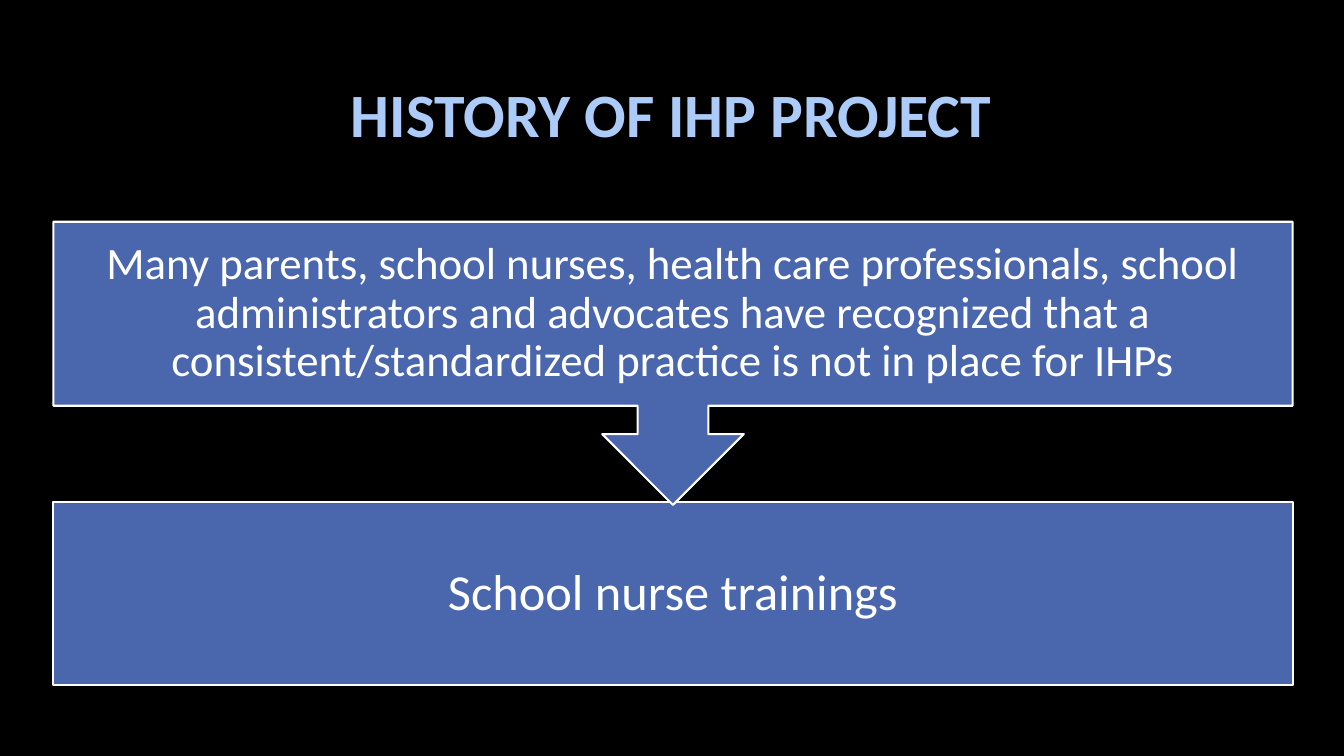
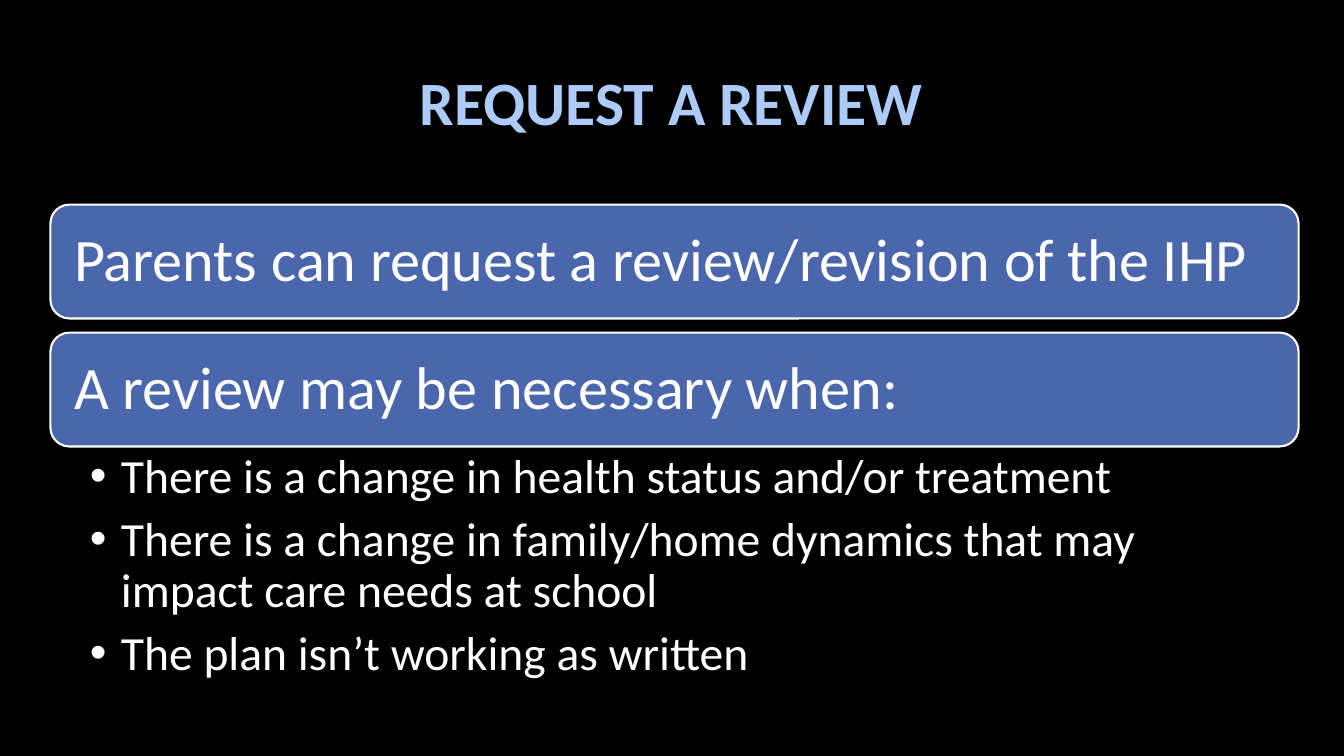
from lxml import etree
from pptx import Presentation
from pptx.dml.color import RGBColor
from pptx.enum.shapes import MSO_SHAPE
from pptx.enum.text import MSO_ANCHOR, PP_ALIGN
from pptx.oxml.ns import qn
from pptx.util import Inches, Pt

COLORS = {
    "background": "000000",
    "title": "ACCBF9",
    "box": "4A66AC",
    "text": "FFFFFF",
}
FONT = "Calibri"


def format_text(shape, size, color, align, bold=False, space_after=0):
    shape.text_frame.word_wrap = True
    for paragraph in shape.text_frame.paragraphs:
        paragraph.alignment = align
        paragraph.line_spacing = 0.9
        paragraph.space_after = Pt(space_after)
        for run in paragraph.runs:
            run.font.name = FONT
            run.font.size = Pt(size)
            run.font.bold = bold
            run.font.color.rgb = RGBColor.from_string(COLORS[color])


def add_box(slide, kind, left, top, width, height, text, size, align, inset):
    """Add an outlined blue shape with its text set vertically in the middle."""
    box = slide.shapes.add_shape(
        kind, Inches(left), Inches(top), Inches(width), Inches(height))
    box.shadow.inherit = False
    box.fill.solid()
    box.fill.fore_color.rgb = RGBColor.from_string(COLORS["box"])
    box.line.color.rgb = RGBColor.from_string(COLORS["text"])
    box.line.width = Pt(1.5)
    frame = box.text_frame
    frame.text = text
    frame.vertical_anchor = MSO_ANCHOR.MIDDLE
    frame.margin_left = frame.margin_right = Inches(inset)
    frame.margin_top = frame.margin_bottom = Inches(inset)
    format_text(box, size, "text", align)


presentation = Presentation()
presentation.slide_width = Inches(13.33)
presentation.slide_height = Inches(7.5)
background = presentation.slide_master.background.fill
background.solid()
background.fore_color.rgb = RGBColor.from_string(COLORS["background"])

# Titles
slides = []
for title_text, title_top in [("HISTORY OF IHP PROJECT", 0.44),
                              ("REQUEST A REVIEW", 0.32)]:
    slide = presentation.slides.add_slide(presentation.slide_layouts[5])
    title = slide.shapes.title
    title.left, title.top = Inches(1), Inches(title_top)
    title.width, title.height = Inches(11.32), Inches(1.45)
    title.text_frame.text = title_text
    title.text_frame.vertical_anchor = MSO_ANCHOR.MIDDLE
    format_text(title, 44, "title", PP_ALIGN.CENTER, bold=True)
    slides.append(slide)
history_slide, review_slide = slides

# History: a callout that points down to the next step
add_box(history_slide, MSO_SHAPE.RECTANGLE, 0.53, 4.98, 12.29, 1.82,
        "School nurse trainings", 36, PP_ALIGN.CENTER, 0.28)
add_box(history_slide, MSO_SHAPE.DOWN_ARROW_CALLOUT, 0.53, 2.2, 12.29, 2.81,
        "Many parents, school nurses, health care professionals, school "
        "administrators and advocates have recognized that a "
        "consistent/standardized practice is not in place for IHPs",
        32, PP_ALIGN.CENTER, 0.25)

# Review: two bars, then the reasons
bar_texts = ["Parents can request a review/revision of the IHP",
             "A review may be necessary when:"]
for index, bar_text in enumerate(bar_texts):
    add_box(review_slide, MSO_SHAPE.ROUNDED_RECTANGLE,
            0.5, 2.03 + index * 1.27, 12.38, 1.13,
            bar_text, 43, PP_ALIGN.LEFT, 0.18)

reasons = review_slide.shapes.add_textbox(
    Inches(0.5), Inches(4.43), Inches(12.38), Inches(2.43))
frame = reasons.text_frame
frame.margin_left, frame.margin_right = Inches(0.39), Inches(0.33)
frame.margin_top = frame.margin_bottom = Inches(0.06)
frame.text = "\n".join([
    "There is a change in health status and/or treatment",
    "There is a change in family/home dynamics that may "
    "impact care needs at school",
    "The plan isn’t working as written",
])
format_text(reasons, 34, "text", PP_ALIGN.LEFT, space_after=8)
for paragraph in frame.paragraphs:
    properties = paragraph._p.get_or_add_pPr()
    properties.set("marL", str(Inches(0.31)))
    properties.set("indent", str(-Inches(0.31)))
    etree.SubElement(properties, qn("a:buFont")).set("typeface", "Arial")
    etree.SubElement(properties, qn("a:buChar")).set("char", "•")

presentation.save("out.pptx")
